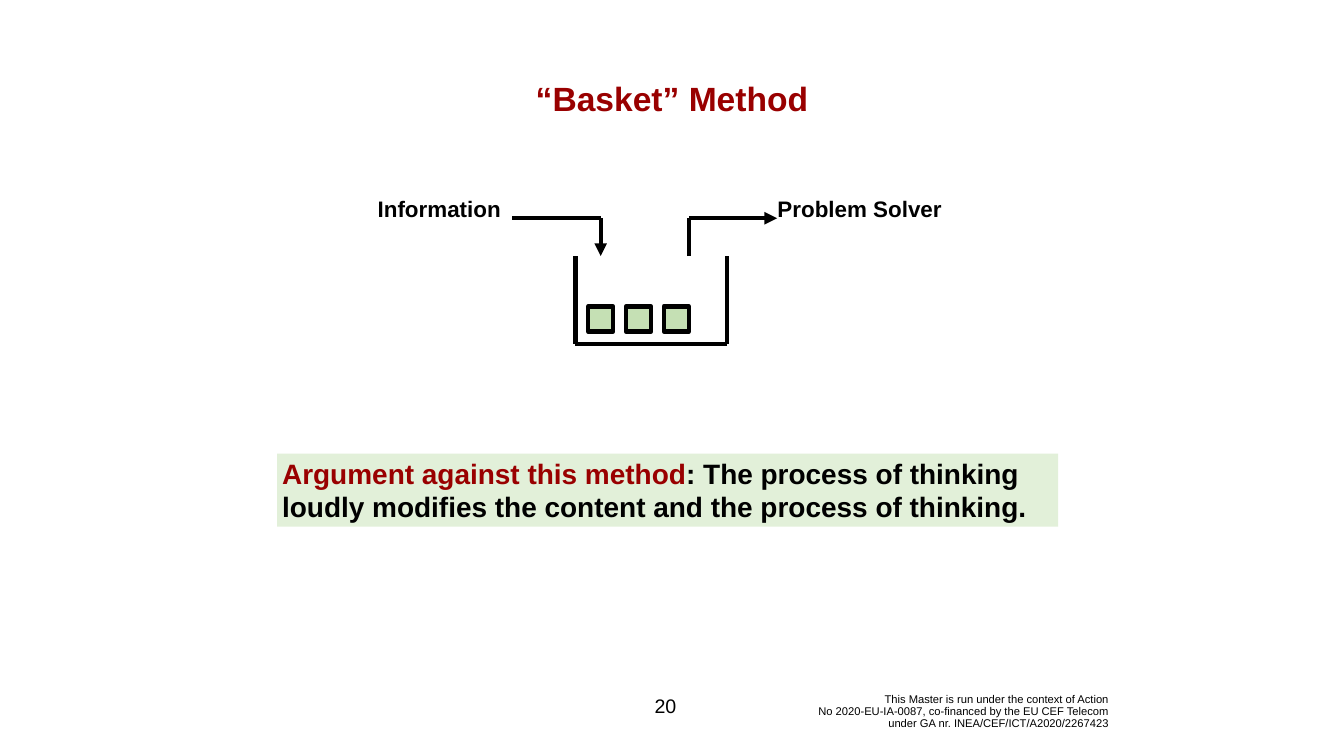
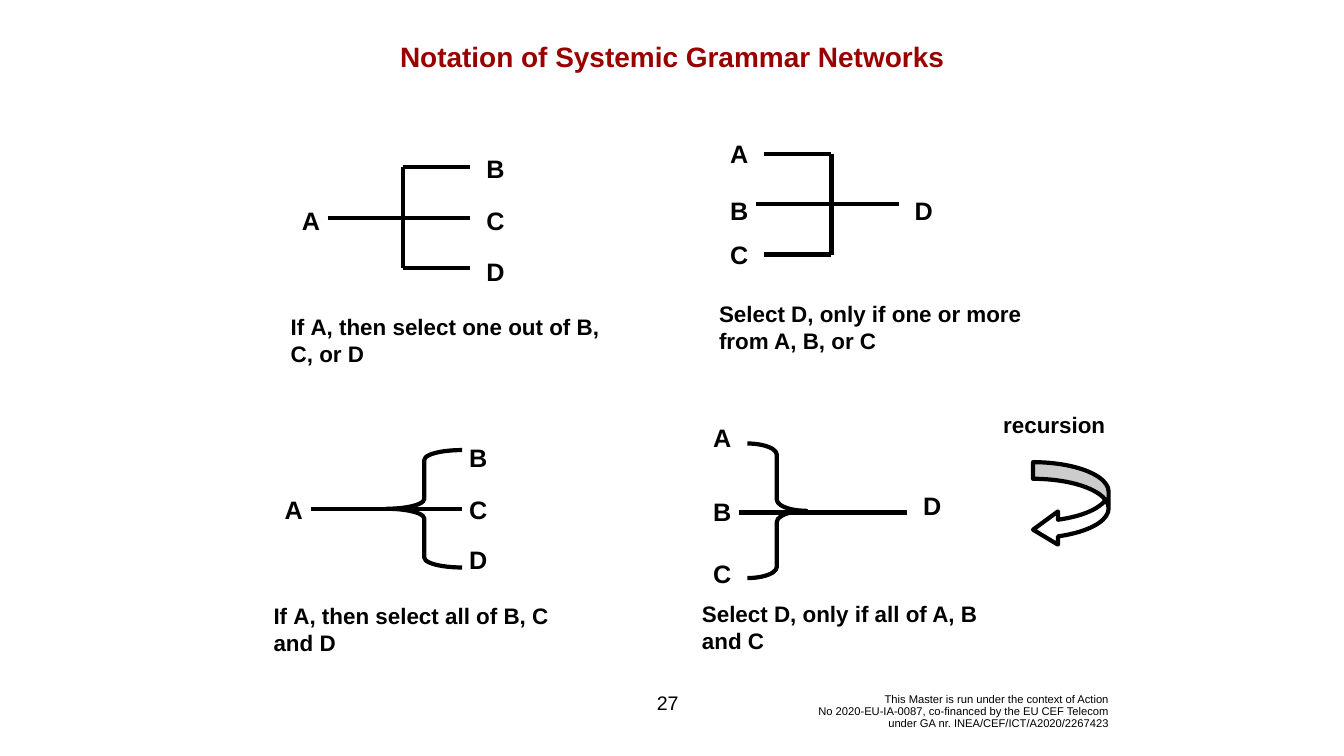
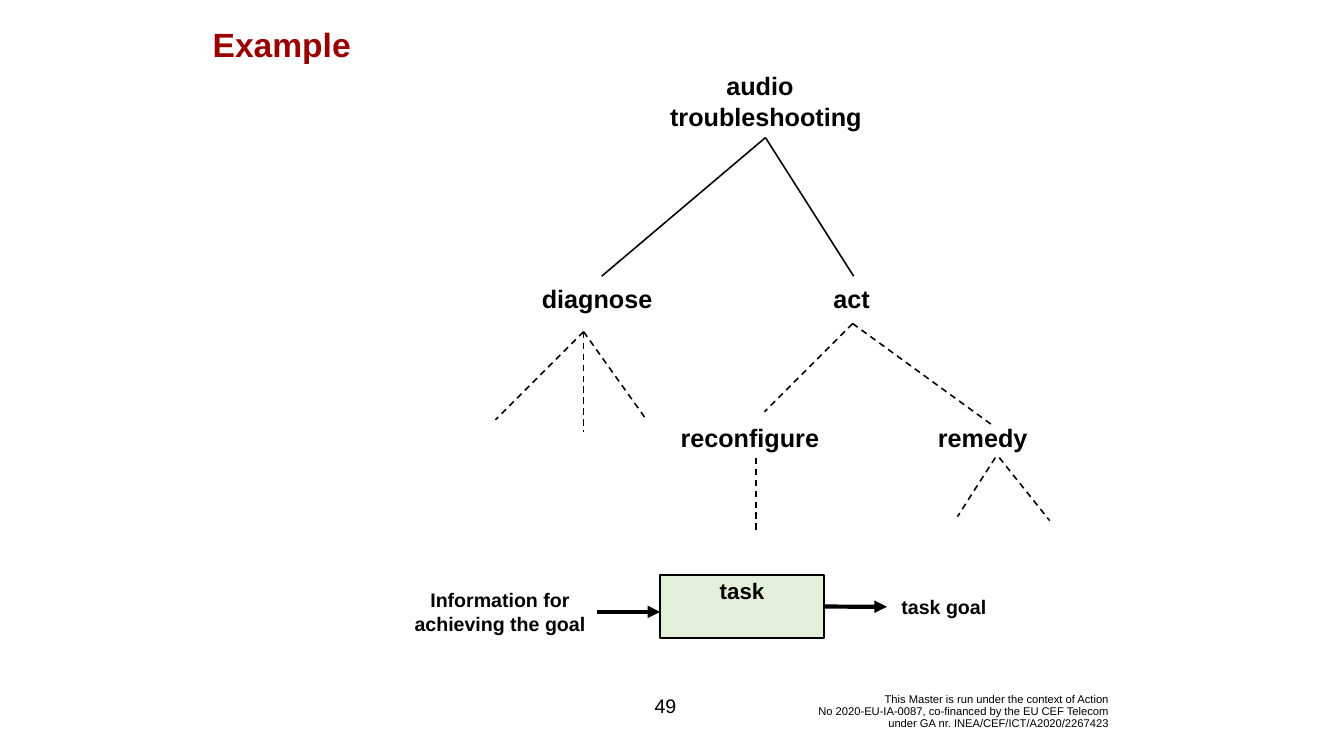
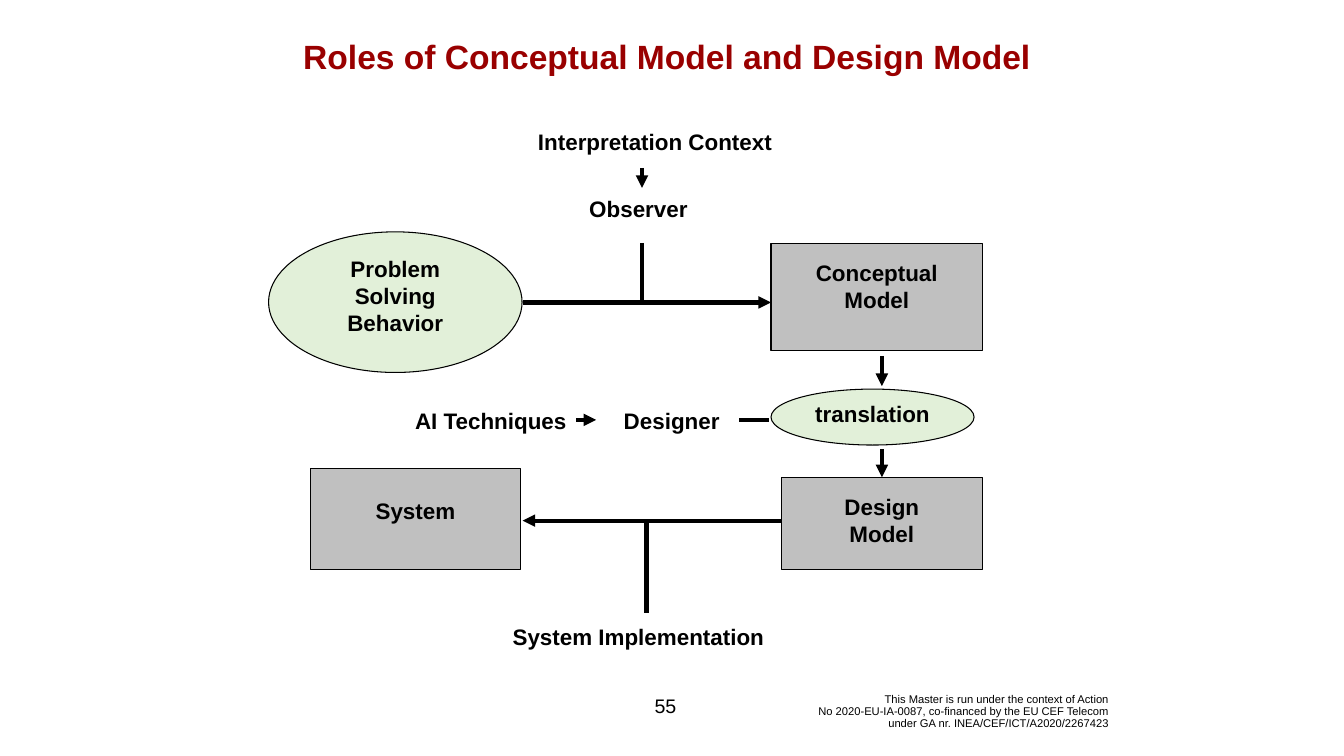
from copy import deepcopy

from lxml import etree
from pptx import Presentation
from pptx import util as u
from pptx.dml.color import RGBColor
from pptx.enum import dml, shapes, text
from pptx.oxml.ns import qn

FONT = "Arial"
BLACK, WHITE, RED, GREY = "000000", "FFFFFF", "990000", "C0C0C0"
GREEN, PALE_GREEN = "C5E0B4", "E2F0D9"
LEFT, CENTER, RIGHT = text.PP_ALIGN.LEFT, text.PP_ALIGN.CENTER, text.PP_ALIGN.RIGHT
TOP, MIDDLE = text.MSO_ANCHOR.TOP, text.MSO_ANCHOR.MIDDLE
RECTANGLE, OVAL = shapes.MSO_SHAPE.RECTANGLE, shapes.MSO_SHAPE.OVAL
THICK, THIN, OUTLINE = 6, 2.25, 1.5
FOOTER = ("This Master is run under the context of Action\v"
          "No 2020-EU-IA-0087, co-financed by the EU CEF Telecom\v"
          "under GA nr. INEA/CEF/ICT/A2020/2267423")


def colour(value):
    return RGBColor.from_string(value)


def inches(*values):
    return [u.Inches(value) for value in values]


def set_all(target, values):
    for name, value in values.items():
        setattr(target, name, value)


def format_run(run, size, ink=BLACK, bold=True):
    set_all(run.font, {"name": FONT, "size": u.Pt(size), "bold": bold})
    run.font.color.rgb = colour(ink)


def write(shape, words, size=32, ink=BLACK, bold=True, align=CENTER, anchor=TOP, top=0.05):
    """Fill a shape with text; a newline starts a paragraph, a vertical tab a line."""
    frame = shape.text_frame
    frame.text = words
    set_all(frame, {
        "word_wrap": True, "auto_size": text.MSO_AUTO_SIZE.NONE, "vertical_anchor": anchor,
        "margin_left": u.Inches(0.1), "margin_right": u.Inches(0.1),
        "margin_top": u.Inches(top), "margin_bottom": u.Inches(0.05),
    })
    for paragraph in frame.paragraphs:
        set_all(paragraph, {"alignment": align, "space_before": u.Pt(0)})
        for run in paragraph.runs:
            format_run(run, size, ink, bold)


def add_label(slide, words, left, top, width, height=0.64, **style):
    label = slide.shapes.add_textbox(*inches(left, top, width, height))
    write(label, words, **style)
    return label


def add_box(slide, kind, area, fill=None, line=None):
    box = slide.shapes.add_shape(kind, *inches(*area))
    box.shadow.inherit = False
    if fill:
        box.fill.solid()
        box.fill.fore_color.rgb = colour(fill)
    else:
        box.fill.background()
    if line:
        box.line.color.rgb = colour(BLACK)
        box.line.width = u.Pt(line)
    else:
        box.line.fill.background()
    return box


def add_line(slide, start, end, width=THICK, dashed=False, arrow=False):
    line = slide.shapes.add_connector(shapes.MSO_CONNECTOR.STRAIGHT, *inches(*start, *end))
    line.line.color.rgb = colour(BLACK)
    line.line.width = u.Pt(width)
    if dashed:
        line.line.dash_style = dml.MSO_LINE.DASH
    properties = line.element.find(qn("p:spPr"))
    if arrow:
        etree.SubElement(properties.find(qn("a:ln")), qn("a:tailEnd"), type="triangle")
    etree.SubElement(properties, qn("a:effectLst"))
    return line


def add_route(slide, *points, arrow=False):
    """Draw straight lines from point to point, with the arrowhead on the last."""
    for index, (start, end) in enumerate(zip(points, points[1:]), 2):
        add_line(slide, start, end, arrow=arrow and index == len(points))


def add_branches(slide, root, ends, dashed=True):
    for end in ends:
        add_line(slide, root, end, THIN, dashed)


def add_footer(slide):
    footer = add_label(slide, FOOTER, 15.02, 13.74, 7.08, 0.76,
                       size=16, bold=False, align=RIGHT, anchor=MIDDLE)
    paragraph = footer.text_frame.paragraphs[0]
    paragraph.line_spacing = 0.9
    run_format = paragraph.runs[0].font
    for line_break in footer.element.iter(qn("a:br")):
        run_properties = footer.element.find(".//" + qn("a:rPr"))
        line_break.insert(0, deepcopy(run_properties))


def start_slide(presentation, title, area, number, number_area=(12.65, 13.61, 1.11, 0.8),
                size=48, align=CENTER):
    slide = presentation.slides.add_slide(presentation.slide_layouts[5])
    heading = slide.shapes.title
    set_all(heading, dict(zip(("left", "top", "width", "height"), inches(*area))))
    write(heading, title, size=size, ink=RED, align=align)
    add_footer(slide)
    add_label(slide, str(number), *number_area, size=28, bold=False, anchor=MIDDLE)
    return slide


def basket_slide(presentation):
    slide = start_slide(presentation, "“Basket” Method", (5.67, 1.5, 15.33, 0.91), 20)
    rim, bottom = 5.08, 6.83
    add_route(slide, (11.42, rim), (11.42, bottom), (14.42, bottom), (14.42, rim))
    for index in range(3):
        add_box(slide, RECTANGLE, (11.67 + 0.75 * index, 6.08, 0.5, 0.5), GREEN, THICK)
    add_route(slide, (10.17, 4.33), (11.92, 4.33), (11.92, rim), arrow=True)
    add_route(slide, (13.67, rim), (13.67, 4.33), (15.42, 4.33), arrow=True)
    add_label(slide, "Information", 6.83, 3.83, 3.21, align=RIGHT)
    add_label(slide, "Problem Solver", 15.33, 3.83, 5.33, align=LEFT)

    argument = add_box(slide, RECTANGLE, (5.5, 9, 15.5, 1.45), PALE_GREEN)
    write(argument, "Argument against this method", size=40, ink=RED, align=LEFT)
    reason = argument.text_frame.paragraphs[0].add_run()
    reason.text = (": The process of thinking loudly modifies the content "
                   "and the process of thinking.")
    format_run(reason, 40)


def add_letters(slide, left, tops):
    for letter, top in tops.items():
        add_label(slide, letter, left, top, 1, 0.71, size=36)


def add_caption(slide, words, left, top):
    add_label(slide, words, left, top, 6.5, 1.18, align=LEFT)


def add_choice(slide, left, top, caption):
    """Letter A on the left, leading to B, C and D on the right."""
    add_letters(slide, left, {"Α": top})
    add_letters(slide, left + 3.66, {"Β": top - 1.03, "C": top, "D": top + 1})
    add_caption(slide, caption, left, top + 2.14)


def add_fork(slide, stem, spine, tips):
    """A stem (from x, to x, y) crossed by a spine with a tip line 1 inch above and below."""
    start, end, middle = stem
    add_line(slide, (start, middle), (end, middle))
    add_route(slide, (tips, middle - 1), (spine, middle - 1),
              (spine, middle + 1), (tips, middle + 1))


def add_outline(slide, kind, area, adjustments, fill=None):
    shape = add_box(slide, kind, area, fill, THICK)
    for index, value in enumerate(adjustments):
        shape.adjustments[index] = value


def notation_slide(presentation):
    slide = start_slide(presentation, "Notation of Systemic Grammar Networks",
                        (5.17, 0.73, 16.33, 0.77), 27, (12.75, 13.48, 1, 0.93), size=40)
    add_fork(slide, (6.5, 9.33, 4.32), 8, 9.33)
    add_choice(slide, 5.67, 4.03, "If Α, then select one out of B, C, or D")

    add_fork(slide, (15, 17.83, 4.05), 16.5, 15.17)
    add_letters(slide, 14.17, {"Α": 2.7, "Β": 3.83, "C": 4.7})
    add_letters(slide, 17.83, {"D": 3.83})
    add_caption(slide, "Select D, only if one or more from A, B, or C", 14.17, 5.9)

    add_outline(slide, shapes.MSO_SHAPE.LEFT_BRACE, (7.67, 8.93, 1.5, 2.33), (0.13, 0.5))
    add_line(slide, (6.17, 10.1), (9.17, 10.1))
    add_choice(slide, 5.33, 9.76, "If Α, then select all of B, C and D")

    add_outline(slide, shapes.MSO_SHAPE.RIGHT_BRACE, (14.83, 8.8, 1.17, 2.67), (0.19, 0.5))
    add_line(slide, (14.67, 10.17), (18, 10.17))
    add_letters(slide, 13.83, {"Α": 8.33, "Β": 9.8, "C": 11.03})
    add_letters(slide, 18, {"D": 9.67})
    add_caption(slide, "Select D, only if all of A, B and C", 13.83, 11.86)

    add_outline(slide, shapes.MSO_SHAPE.CURVED_LEFT_ARROW, (20.5, 9.17, 1.5, 1.67),
                (0.22, 0.44, 0.33), WHITE)
    add_label(slide, "recursion", 18.67, 8.1, 4.5)


def example_slide(presentation):
    slide = start_slide(presentation, "Example", (4.12, 0.42, 6, 0.91), 49, align=LEFT)
    add_branches(slide, (15.19, 2.73), [(16.94, 5.48), (11.94, 5.48)], dashed=False)
    add_branches(slide, (16.92, 6.42), [(15.17, 8.17), (19.67, 8.42)])
    add_branches(slide, (11.58, 6.58), [(11.58, 8.58), (9.83, 8.33), (12.83, 8.33)])
    add_branches(slide, (15, 9.08), [(15, 10.58)])
    add_branches(slide, (19.75, 9.08), [(19, 10.25)])
    add_branches(slide, (19.83, 9.08), [(20.83, 10.33)])
    nodes = [("audio", 15.08, 1.34), ("troubleshooting", 15.2, 1.97),
             ("diagnose", 11.85, 5.58), ("act", 16.9, 5.58),
             ("reconfigure", 14.88, 8.32), ("remedy", 19.5, 8.32)]
    for name, center, top in nodes:
        add_label(slide, name, center - 2.25, top, 4.5, 0.71, size=36)

    task = add_box(slide, RECTANGLE, (13.1, 11.41, 3.25, 1.25), PALE_GREEN, THIN)
    write(task, "task")
    add_line(slide, (11.85, 12.14), (13.1, 12.14), arrow=True)
    goal_arrow = add_line(slide, (16.35, 12.04), (17.6, 12.04), arrow=True)
    goal_arrow.begin_connect(task, 3)
    add_label(slide, "Information for achieving the goal", 7.67, 11.62, 4.5, 1.04, size=28)
    add_label(slide, "task goal", 16.48, 11.75, 4.5, 0.57, size=28)


def roles_slide(presentation):
    slide = start_slide(presentation, "Roles of Conceptual Model and Design Model",
                        (4.74, 0.67, 17, 0.91), 55)
    boxes = [
        ("Problem Solving Behavior", OVAL, (5.33, 4.6, 5.03, 2.79), PALE_GREEN, 0.05),
        ("Conceptual\nModel", RECTANGLE, (15.3, 4.83, 4.2, 2.12), GREY, 0.31),
        ("translation", OVAL, (15.3, 7.72, 4.03, 1.11), PALE_GREEN, 0.05),
        ("System", RECTANGLE, (6.16, 9.3, 4.17, 2), GREY, 0.56),
        ("Design\nModel", RECTANGLE, (15.5, 9.47, 4, 1.83), GREY, 0.31),
    ]
    for words, kind, area, fill, top in boxes:
        box = add_box(slide, kind, area, fill, OUTLINE)
        write(box, words, top=top)
    design_model = box

    arrows = [((12.74, 3.33), (12.74, 3.73)), ((10.37, 6), (15.3, 6)),
              ((15.5, 10.33), (10.37, 10.33)), ((11.44, 8.33), (11.83, 8.33)),
              ((17.5, 7.06), (17.5, 7.66)), ((17.5, 8.91), (17.5, 9.47))]
    for start, end in arrows:
        arrow = add_line(slide, start, end, arrow=True)
    arrow.end_connect(design_model, 0)
    for start, end in [((12.74, 4.82), (12.74, 6)), ((14.67, 8.33), (15.26, 8.33)),
                       ((12.83, 10.33), (12.83, 12.17))]:
        add_line(slide, start, end)

    labels = [("Interpretation Context", 10, 2.5), ("Observer", 9.67, 3.83),
              ("AI Techniques", 6.74, 8.03), ("Designer", 10.33, 8.03),
              ("System Implementation", 9.67, 12.32)]
    for words, left, top in labels:
        add_label(slide, words, left, top, 6)


def main():
    presentation = Presentation()
    presentation.slide_width, presentation.slide_height = inches(26.67, 15)
    basket_slide(presentation)
    notation_slide(presentation)
    example_slide(presentation)
    roles_slide(presentation)
    presentation.save("out.pptx")


if __name__ == "__main__":
    main()
